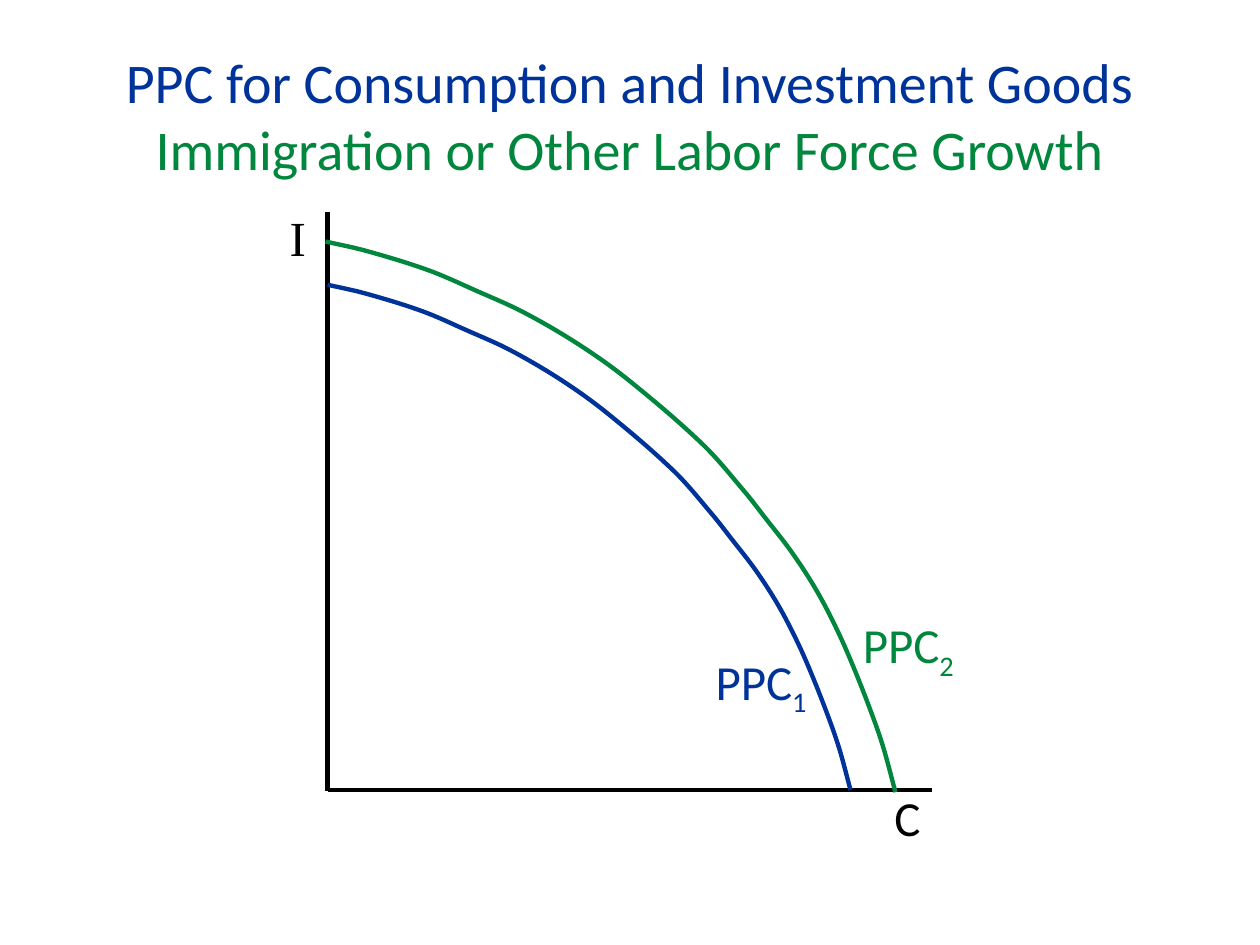
from math import dist
from pptx import Presentation
from pptx.dml.color import RGBColor
from pptx.enum import shapes, text
from pptx.oxml.ns import qn
from pptx.util import Pt
from lxml import etree

# Theme
THEME = {
    "blue": RGBColor(0x00, 0x33, 0x99), "green": RGBColor(0x00, 0x86, 0x3D),
    "black": RGBColor(0, 0, 0),
    "sans": "Calibri", "serif": "Times New Roman",
    "title": Pt(32), "label": Pt(28), "line": Pt(2.5),
}

# Content
TITLE = [("PPC for Consumption and Investment Goods", "blue"),
         ("Immigration or Other Labor Force Growth", "green")]
# text, subscript, font, colour, left, top, width
NAMES = [("C", "", "sans", "black", 504, 446.4, 36),
         ("I", "", "serif", "black", 158.4, 115.2, 30)]
AXES = [(187.2, 121, 187.2, 452.2), (187.2, 451.4, 532.8, 451.4)]
# colour, left, top, scale, then the label of the curve
FIRST = (("blue", 187.2, 162.7, 1),
         ("PPC", "1", "sans", "blue", 401.8, 368.6, 72))
SECOND = (("green", 186, 138, 1.09),
          ("PPC", "2", "sans", "green", 486, 347.8, 72))
KNOTS = [(0, 0), (21.6, 5), (54, 15.1), (79.2, 25.9), (104.4, 37.4),
         (133.9, 54.7), (159.8, 73.4), (198, 106.6), (219.6, 131),
         (230.4, 144.7), (244.8, 163.4), (257.8, 183.6), (269.3, 205.9),
         (278.6, 227.5), (288, 252), (293, 267.1), (298.8, 288.7)]


def style(item, **values):
    for key, value in values.items():
        setattr(item, key, value)


def write(para, words, face, size, tint):
    run = para.add_run()
    run.text = words
    style(run.font, name=THEME[face], size=THEME[size])
    run.font.color.rgb = THEME[tint]
    return run


def stroke(shape, tint):
    shape.line.color.rgb = THEME[tint]
    shape.line.width = THEME["line"]


def bend(curve):
    """Turn the straight segments of an outline into Bezier curves."""
    marks = list(curve._element.iter(qn("a:pt")))
    dots = [(int(m.get("x")), int(m.get("y"))) for m in marks]
    ends = [dots[0], *dots, dots[-1]]
    slopes = [((c[0] - a[0]) / dist(a, c), (c[1] - a[1]) / dist(a, c))
              for a, c in zip(ends, ends[2:])]
    for i, mark in enumerate(marks[1:]):
        start, stop = dots[i], dots[i + 1]
        reach = dist(start, stop) / 3
        line = mark.getparent()
        line.tag = qn("a:cubicBezTo")
        for spot, slope, way in ((start, slopes[i], reach),
                                 (stop, slopes[i + 1], -reach)):
            knob = etree.Element(qn("a:pt"))
            for key, at, tilt in zip("xy", spot, slope):
                knob.set(key, str(round(at + tilt * way)))
            mark.addprevious(knob)


def label(parts, words, sub, face, tint, left, top, width):
    box = parts.add_textbox(Pt(left), Pt(top), Pt(width), Pt(41))
    style(box.text_frame, word_wrap=True,
          auto_size=text.MSO_AUTO_SIZE.SHAPE_TO_FIT_TEXT)
    para = box.text_frame.paragraphs[0]
    write(para, words, face, "label", tint)
    if sub:
        run = write(para, sub, face, "label", tint)
        run._r.get_or_add_rPr().set("baseline", "-25000")


def plot(parts, tint, left, top, scale):
    dots = [(Pt(left + x * scale), Pt(top + y * scale)) for x, y in KNOTS]
    pen = parts.build_freeform(*dots[0])
    pen.add_line_segments(dots[1:], close=False)
    curve = pen.convert_to_shape()
    bend(curve)
    curve.shadow.inherit = False
    curve.fill.background()
    stroke(curve, tint)


deck = Presentation()
style(deck, slide_width=Pt(720), slide_height=Pt(540))
slide = deck.slides.add_slide(deck.slide_layouts[5])

# Title
head = slide.shapes.title
style(head, left=Pt(50.4), top=Pt(23), width=Pt(619.2), height=Pt(85))
frame = head.text_frame
style(frame, word_wrap=True, vertical_anchor=text.MSO_ANCHOR.MIDDLE,
      auto_size=text.MSO_AUTO_SIZE.SHAPE_TO_FIT_TEXT)
for row, (words, tint) in enumerate(TITLE):
    para = frame.add_paragraph() if row else frame.paragraphs[0]
    style(para, alignment=text.PP_ALIGN.CENTER, space_before=Pt(0))
    write(para, words, "sans", "title", tint)

# Graph: axis names and axes
graph = slide.shapes.add_group_shape().shapes
for name in NAMES:
    label(graph, *name)
for ends in AXES:
    axis = graph.add_connector(shapes.MSO_CONNECTOR.STRAIGHT, *map(Pt, ends))
    stroke(axis, "black")
    etree.SubElement(axis._element.spPr, qn("a:effectLst"))

# Curves: the first belongs to the graph, the second lies over it
for parts, (line, name) in ((graph, FIRST), (slide.shapes, SECOND)):
    plot(parts, *line)
    label(parts, *name)

deck.save("out.pptx")
